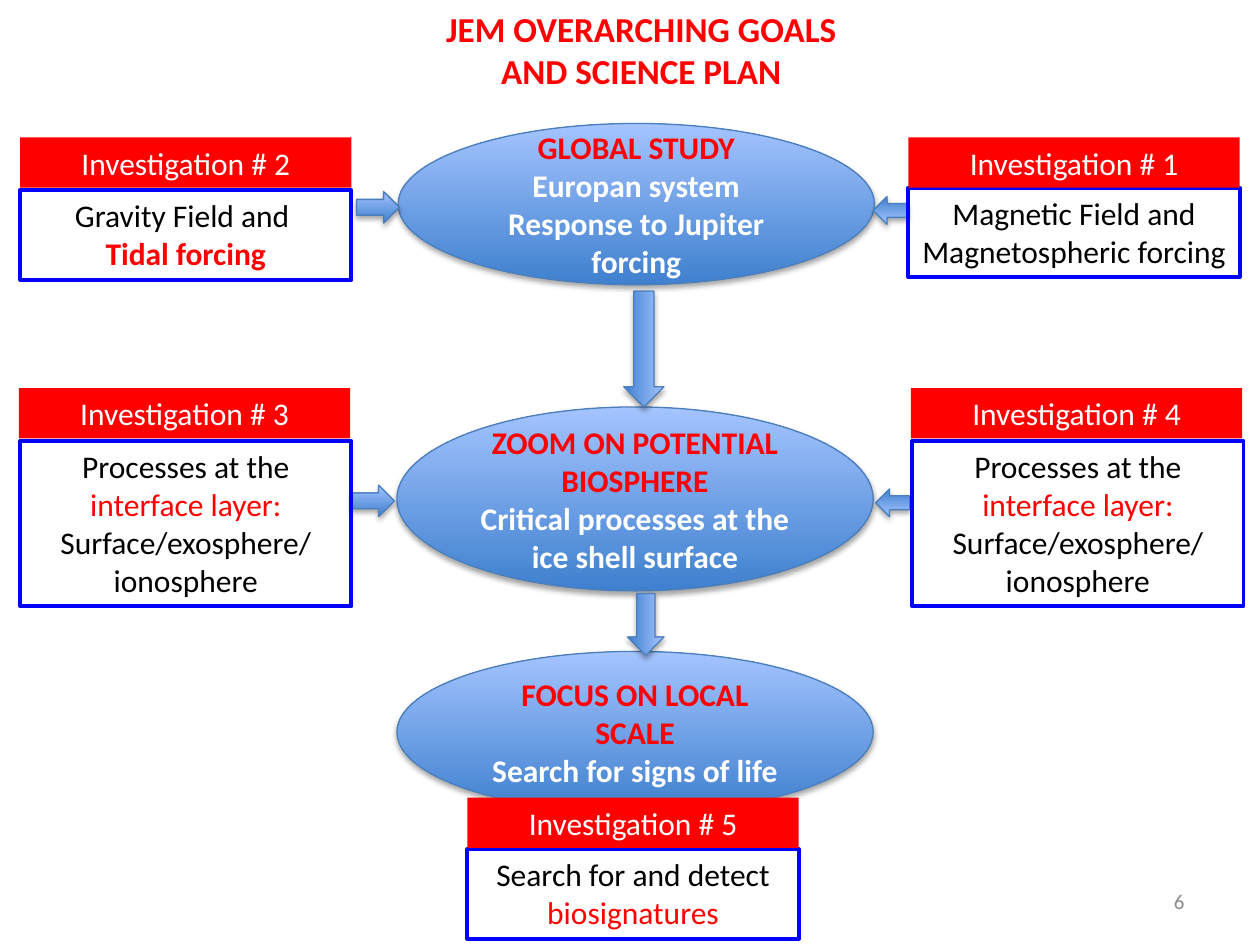
from pptx import Presentation, util as u
from pptx.dml.color import RGBColor
from pptx.enum import shapes, text
from pptx.oxml import parse_xml
from pptx.oxml.ns import nsdecls

I = u.Inches
THEME = {
    "font": "Calibri", "title": 20, "body": 18, "number": 12,
    "red": "FF0000", "white": "FFFFFF", "black": "000000", "grey": "8C8C8C",
    "frame": "0000FF", "edge": "4B7EBC", "dark": "3F80CE", "light": "A4C4FF",
}
MID, TOP = text.MSO_ANCHOR.MIDDLE, text.MSO_ANCHOR.TOP
GROW, FIXED = text.MSO_AUTO_SIZE.SHAPE_TO_FIT_TEXT, text.MSO_AUTO_SIZE.NONE
CENTER, RIGHT = text.PP_ALIGN.CENTER, text.PP_ALIGN.RIGHT


def write(sp, paragraphs, size="body", anchor=TOP, align=CENTER, fit=FIXED):
    """Fill a shape with paragraphs, each a list of (text, colour, bold) runs."""
    tf = sp.text_frame
    frame = {"word_wrap": True, "auto_size": fit, "vertical_anchor": anchor,
             "margin_left": I(0.1), "margin_right": I(0.1),
             "margin_top": I(0.05), "margin_bottom": I(0.05)}
    for name, value in frame.items():
        setattr(tf, name, value)
    for i, runs in enumerate(paragraphs):
        p = tf.add_paragraph() if i else tf.paragraphs[0]
        p.alignment = align
        for words, colour, bold in runs:
            r = p.add_run()
            r.text = words
            font = {"name": THEME["font"], "size": u.Pt(THEME[size]), "bold": bold}
            for name, value in font.items():
                setattr(r.font, name, value)
            r.font.color.rgb = RGBColor.from_string(THEME[colour])


def add(kind, box, fill=None, line=None, width=0.75):
    """Add a shape; the fill "glossy" is the blue gradient with a soft shadow."""
    sp = s.shapes.add_shape(kind, *map(I, box))
    sp.shadow.inherit = False
    if fill == "glossy":
        sp.fill.gradient()
        sp.fill.gradient_angle = 90
        for stop, colour, at in zip(sp.fill.gradient_stops, ("dark", "light"), (0, 1)):
            stop.color.rgb = RGBColor.from_string(THEME[colour])
            stop.position = at
        sp._element.spPr.find(".//{*}effectLst").append(parse_xml(
            f'<a:outerShdw {nsdecls("a")} blurRad="{u.Pt(3.1)}" dist="{u.Pt(1.8)}" '
            'dir="5400000" rotWithShape="0"><a:srgbClr val="000000">'
            '<a:alpha val="35000"/></a:srgbClr></a:outerShdw>'))
    elif fill:
        sp.fill.solid()
        sp.fill.fore_color.rgb = RGBColor.from_string(THEME[fill])
    else:
        sp.fill.background()
    if line:
        sp.line.color.rgb = RGBColor.from_string(THEME[line])
        sp.line.width = u.Pt(width)
    else:
        sp.line.fill.background()
    return sp


prs = Presentation()
prs.slide_width, prs.slide_height = I(10), I(7.5)
s = prs.slides.add_slide(prs.slide_layouts[5])

# Title
title = s.shapes.title
title.left, title.top, title.width, title.height = map(I, (3.2, 0.01, 3.78, 0.77))
write(title, [[("JEM OVERARCHING GOALS", "red", True)],
              [("AND SCIENCE PLAN", "red", True)]], size="title")

# Study stages: left, top, height, heading, description
stages = [
    (3.16, 0.98, 1.28, "GLOBAL STUDY",
     ["Europan system", "Response to Jupiter forcing"]),
    (3.15, 3.23, 1.46, "ZOOM ON POTENTIAL BIOSPHERE",
     ["Critical processes at the ice shell surface"]),
    (3.15, 5.17, 1.28, "FOCUS ON LOCAL SCALE", ["Search for signs of life"]),
]
for left, top, height, heading, lines in stages:
    sp = add(shapes.MSO_SHAPE.OVAL, (left, top, 3.78, height), "glossy", "edge")
    write(sp, [[(heading, "red", True)]] + [[(t, "white", True)] for t in lines],
          anchor=MID)

# Block arrows: box before rotation, rotation
arrows = [
    ((2.83, 1.52, 0.34, 0.25), 0), ((6.93, 1.56, 0.27, 0.22), 180),
    ((2.79, 3.85, 0.34, 0.25), 0), ((6.95, 3.88, 0.27, 0.22), 180),
    ((4.65, 2.61, 0.92, 0.32), 90), ((4.88, 4.81, 0.49, 0.29), 90),
]
for box, turn in arrows:
    add(shapes.MSO_SHAPE.RIGHT_ARROW, box, "glossy", "edge").rotation = turn

# Investigations: number, header left and top, body left, top and height, text
interface = [[("Processes at the ", "black", False), ("interface layer:", "red", False)],
             [("Surface/exosphere/ionosphere", "black", False)]]
investigations = [
    (1, 7.21, 1.09, 7.21, 1.49, 0.71,
     [[("Magnetic Field and", "black", False)],
      [("Magnetospheric forcing", "black", False)]]),
    (2, 0.16, 1.09, 0.16, 1.51, 0.71,
     [[("Gravity Field and ", "black", False)], [("Tidal forcing", "red", True)]]),
    (3, 0.15, 3.08, 0.16, 3.5, 1.31, interface),
    (4, 7.23, 3.08, 7.24, 3.5, 1.31, interface),
    (5, 3.71, 6.33, 3.71, 6.74, 0.71,
     [[("Search for and detect", "black", False)], [("biosignatures", "red", False)]]),
]
for number, head_x, head_y, x, y, height, body in investigations:
    sp = add(shapes.MSO_SHAPE.RECTANGLE, (x, y, 2.63, height), None, "frame", 2.25)
    write(sp, body, fit=GROW)
    sp = add(shapes.MSO_SHAPE.RECTANGLE, (head_x, head_y, 2.63, 0.4), "red")
    write(sp, [[(f"Investigation # {number}", "white", False)]], fit=GROW)

# Slide number
sp = s.shapes.add_textbox(*map(I, (7.17, 6.95, 2.33, 0.4)))
write(sp, [[("6", "grey", False)]], size="number", anchor=MID, align=RIGHT)

prs.save("out.pptx")
